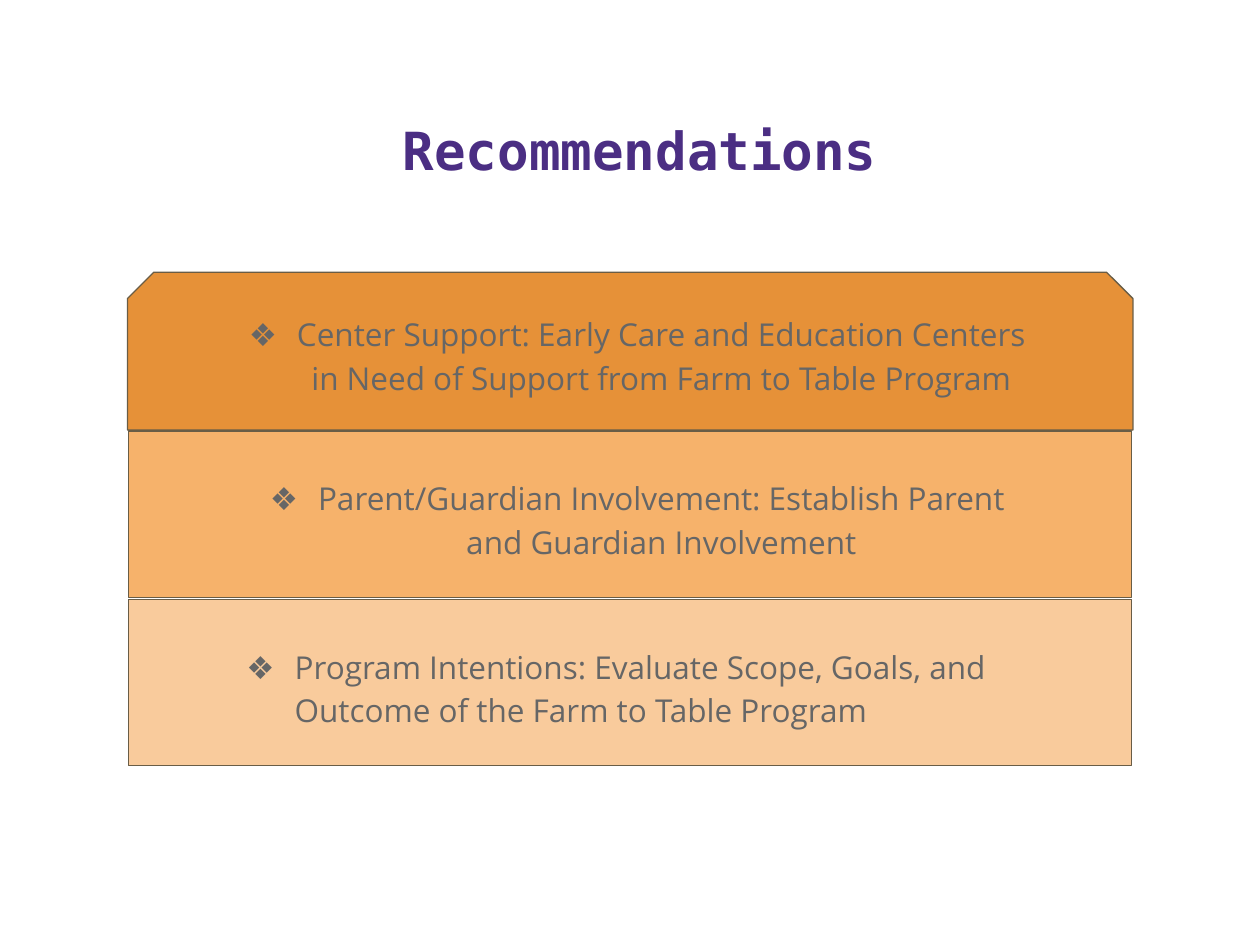
from lxml import etree
from pptx import Presentation
from pptx.dml.color import RGBColor
from pptx.enum.shapes import MSO_SHAPE
from pptx.enum.text import MSO_ANCHOR, PP_ALIGN
from pptx.oxml.ns import qn
from pptx.util import Cm, Pt

SNIP = MSO_SHAPE.SNIP_2_SAME_RECTANGLE
RECT = MSO_SHAPE.RECTANGLE
BOTTOM = MSO_ANCHOR.BOTTOM
TOP = MSO_ANCHOR.TOP
LEFT = PP_ALIGN.LEFT
CENTER = PP_ALIGN.CENTER

PURPLE = RGBColor(0x4B, 0x2E, 0x83)
GRAY = RGBColor(0x66, 0x66, 0x66)
BROWN = RGBColor(0x69, 0x5D, 0x46)
DARK = RGBColor(0xE6, 0x91, 0x38)
MID = RGBColor(0xF6, 0xB2, 0x6B)
LIGHT = RGBColor(0xF9, 0xCB, 0x9C)


def add_text(box, text, font, size, color, align, anchor, inset):
    frame = box.text_frame
    frame.word_wrap = True
    frame.vertical_anchor = anchor
    frame.margin_left = frame.margin_right = Cm(0.25)
    frame.margin_top = frame.margin_bottom = Cm(inset)
    frame.text = text
    para = frame.paragraphs[0]
    para.alignment = align
    run = para.runs[0]
    run.font.name = font
    run.font.size = Pt(size)
    run.font.color.rgb = color
    return para


def add_bullet(para):
    props = para._p.get_or_add_pPr()
    props.set("marL", str(Cm(1.27)))
    props.set("indent", str(Cm(-0.97)))
    tint = etree.SubElement(props, qn("a:buClr"))
    etree.SubElement(tint, qn("a:srgbClr"), val=str(GRAY))
    etree.SubElement(props, qn("a:buFont"), typeface="Open Sans")
    etree.SubElement(props, qn("a:buChar"), char="❖")
    para.line_spacing = 1.15


deck = Presentation()
deck.slide_width = Cm(25.4)
deck.slide_height = Cm(19.05)
slide = deck.slides.add_slide(deck.slide_layouts[6])
shapes = slide.shapes

title = shapes.add_textbox(Cm(1.85), Cm(1.04), Cm(22.73), Cm(2.74))
head = add_text(title, "Recommendations ", "DejaVu Sans Mono", 30, PURPLE,
                CENTER, BOTTOM, 0.13)
head.runs[0].font.bold = True

bands = [
    (SNIP, 2.57, 5.49, 20.27, 3.18, DARK, 5.99, CENTER,
     "Center Support: Early Care and Education Centers in Need of Support "
     "from Farm to Table Program"),
    (RECT, 2.59, 8.69, 20.22, 3.35, MID, 9.3, CENTER,
     "Parent/Guardian Involvement: Establish Parent and Guardian Involvement"),
    (RECT, 2.59, 12.09, 20.22, 3.35, LIGHT, 12.7, LEFT,
     "Program Intentions: Evaluate Scope, Goals, and Outcome of the "
     "Farm to Table Program"),
]

for kind, left, top, width, height, fill, start, align, text in bands:
    band = shapes.add_shape(kind, Cm(left), Cm(top), Cm(width), Cm(height))
    band.shadow.inherit = False
    band.fill.solid()
    band.fill.fore_color.rgb = fill
    band.line.color.rgb = BROWN
    band.line.width = Pt(0.75)
    box = shapes.add_textbox(Cm(4.42), Cm(start), Cm(16.56), Cm(2.16))
    add_bullet(add_text(box, text, "Open Sans", 18, GRAY, align, TOP, 0.25))

deck.save("out.pptx")
